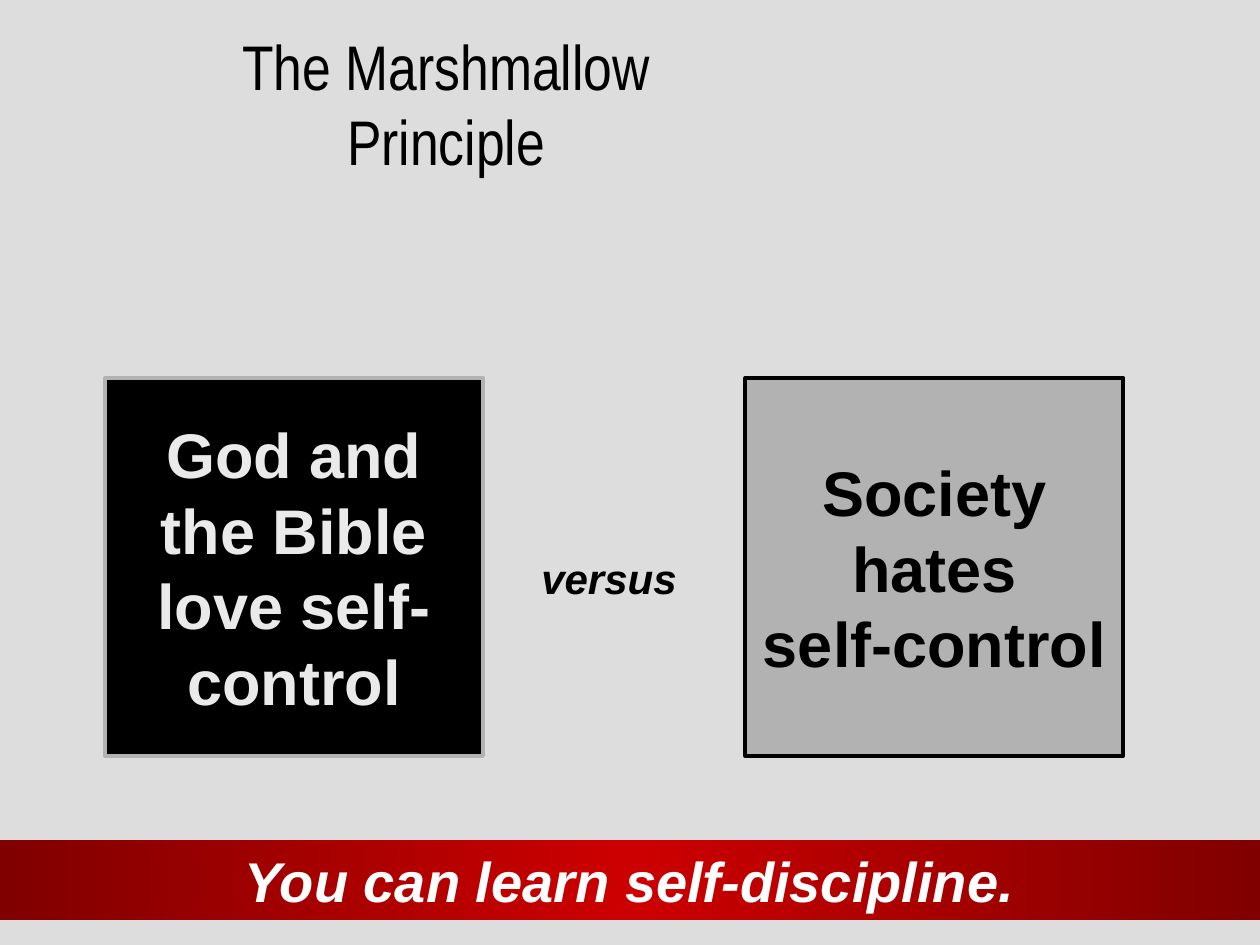
import copy

import pptx
import pptx.dml.color
import pptx.enum.shapes
import pptx.enum.text
import pptx.oxml.ns
import pptx.util

RGBColor = pptx.dml.color.RGBColor
Inches = pptx.util.Inches
Anchor = pptx.enum.text.MSO_ANCHOR

BLACK = RGBColor(0x00, 0x00, 0x00)
WHITE = RGBColor(0xFF, 0xFF, 0xFF)
PAGE_GREY = RGBColor(0xDD, 0xDD, 0xDD)
MID_GREY = RGBColor(0xB2, 0xB2, 0xB2)
PALE_GREY = RGBColor(0xEA, 0xEA, 0xEA)
RED = RGBColor(0xCC, 0x00, 0x00)
DARK_RED = RGBColor(0x80, 0x00, 0x00)

WIDTH, HEIGHT = Inches(10), Inches(7.5)
COLUMN, ROW = WIDTH / 60, HEIGHT / 45


def place(left, top, width, height):
    """Turn columns and rows of the grid into lengths."""
    return [round(length) for length in
            (left * COLUMN, top * ROW, width * COLUMN, height * ROW)]


def write(box, *paragraphs, size, color=BLACK, font="Arial", bold=False,
          italic=False, anchor=Anchor.TOP, wrap=True):
    frame = box.text_frame
    frame.auto_size = pptx.enum.text.MSO_AUTO_SIZE.NONE
    frame.word_wrap = wrap
    frame.vertical_anchor = anchor
    for index, text in enumerate(paragraphs):
        para = frame.add_paragraph() if index else frame.paragraphs[0]
        para.text = text
        para.alignment = pptx.enum.text.PP_ALIGN.CENTER
        for span in para.runs:
            span.font.name = font
            span.font.size = pptx.util.Pt(size)
            span.font.bold = bold
            span.font.italic = italic
            span.font.color.rgb = color


def add_rectangle(page, *cells):
    box = page.shapes.add_shape(
        pptx.enum.shapes.MSO_SHAPE.RECTANGLE, *place(*cells))
    box.shadow.inherit = False
    return box


def add_title(page, *lines):
    title = page.shapes.title
    title.left, title.top, title.width, title.height = place(2, 1, 38.5, 16)
    write(title, *lines, size=36, font="Arial Narrow", wrap=False)


def add_panel(page, left, text, fill, line, color):
    panel = add_rectangle(page, left, 18, 18, 18)
    panel.fill.solid()
    panel.fill.fore_color.rgb = fill
    panel.line.color.rgb = line
    panel.line.width = pptx.util.Pt(2.25)
    write(panel, text, size=36, color=color, bold=True, anchor=Anchor.MIDDLE)


def add_banner(page, text):
    """Add a full-width band that is dark at both ends and bright between."""
    banner = add_rectangle(page, 0, 40, 60, 3.8)
    banner.line.fill.background()
    banner.fill.gradient()
    banner.fill.gradient_angle = 0
    stop_list = banner._element.spPr.find(".//" + pptx.oxml.ns.qn("a:gsLst"))
    stop_list.append(copy.deepcopy(stop_list[-1]))
    stops = zip(banner.fill.gradient_stops, (0, 0.5, 1),
                (DARK_RED, RED, DARK_RED))
    for stop, position, color in stops:
        stop.position = position
        stop.color.rgb = color
    write(banner, text, size=32, color=WHITE, bold=True, italic=True)


def main():
    deck = pptx.Presentation()
    deck.slide_width, deck.slide_height = WIDTH, HEIGHT
    page = deck.slides.add_slide(deck.slide_layouts.get_by_name("Title Only"))
    page.background.fill.solid()
    page.background.fill.fore_color.rgb = PAGE_GREY

    add_banner(page, "You can learn self-discipline.")
    add_panel(page, 5, "God and the Bible love self-control",
              fill=BLACK, line=MID_GREY, color=PALE_GREY)
    add_panel(page, 35.5, "Society\nhates\nself-control",
              fill=MID_GREY, line=BLACK, color=BLACK)
    versus = page.shapes.add_textbox(*place(23, 26, 12, 3))
    write(versus, "versus", size=24, bold=True, italic=True)
    add_title(page, "The Marshmallow", "Principle")

    deck.save("out.pptx")


if __name__ == "__main__":
    main()
